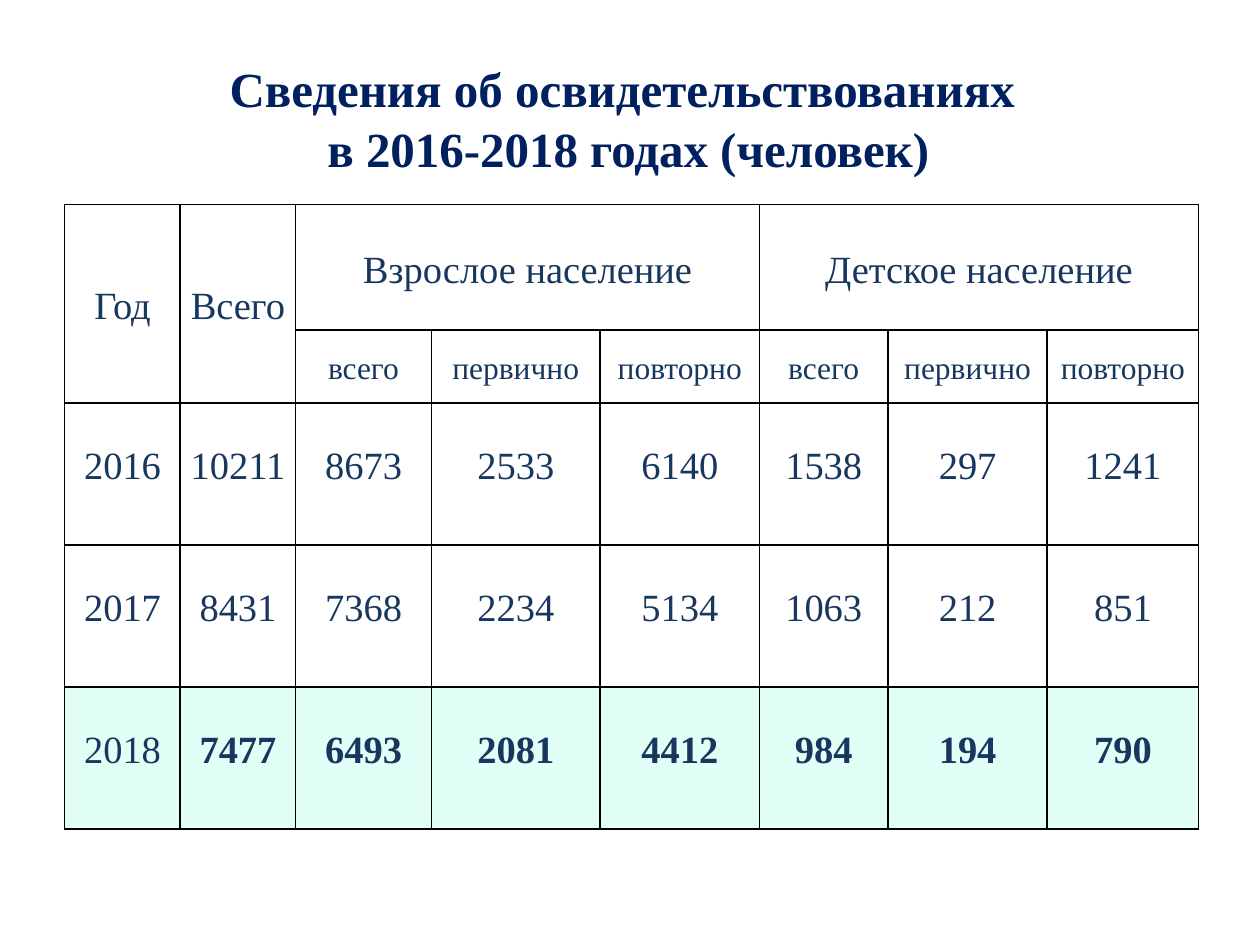
from dataclasses import dataclass

from lxml import etree
from pptx import Presentation
from pptx.dml.color import RGBColor
from pptx.enum import text
from pptx.oxml import ns
from pptx.util import Pt


@dataclass(frozen=True)
class Theme:
    """Colours, font and type sizes of the slide."""
    font: str = "Times New Roman"
    title: str = "002060"
    body: str = "17375E"
    border: str = "000000"
    highlight: str = "E1FFF6"
    title_size: float = 28
    body_size: float = 22
    small_size: float = 18


THEME = Theme()
TITLE = "Сведения об освидетельствованиях \vв 2016-2018 годах (человек)"
GROUPS = ["Взрослое население", "Детское население"]
MEASURES = ["всего", "первично", "повторно"]
ROWS = [
    ["2016", 10211, 8673, 2533, 6140, 1538, 297, 1241],
    ["2017", 8431, 7368, 2234, 5134, 1063, 212, 851],
    ["2018", 7477, 6493, 2081, 4412, 984, 194, 790],
]
COLUMN_WIDTHS = [66, 66, 77.5, 96.5, 91, 73.5, 91, 86.5]
ROW_HEIGHTS = [72, 41.5] + [81.25] * len(ROWS)


def set_text(tf, content, size, color, spacing, bold=False):
    """Write one centred paragraph in the theme font."""
    tf.text = content
    p = tf.paragraphs[0]
    p.alignment = text.PP_ALIGN.CENTER
    p.line_spacing = spacing
    for r in p.runs:
        r.font.name = THEME.font
        r.font.size = Pt(size)
        r.font.bold = bold
        r.font.color.rgb = RGBColor.from_string(color)


def set_borders(cell):
    """Draw a one-point line on every side of a cell."""
    tc_pr = cell._tc.get_or_add_tcPr()
    for i, side in enumerate(("lnL", "lnR", "lnT", "lnB")):
        ln = etree.Element(ns.qn(f"a:{side}"), w=str(Pt(1)))
        fill = etree.SubElement(ln, ns.qn("a:solidFill"))
        etree.SubElement(fill, ns.qn("a:srgbClr"), val=THEME.border)
        tc_pr.insert(i, ln)


def fill_cell(cell, content, size=THEME.body_size, header=False, bold=False):
    """Set the text, margins and anchor of a header or value cell."""
    cell.margin_left = cell.margin_right = Pt(5)
    cell.margin_top = cell.margin_bottom = 0
    anchor = text.MSO_ANCHOR
    cell.vertical_anchor = anchor.MIDDLE if header else anchor.TOP
    set_text(cell.text_frame, str(content), size, THEME.body,
             1.15 if header else 2.0, bold)


def add_title(s, left, top, width, height):
    """Place the two-line slide title in the given box."""
    sp = s.shapes.add_textbox(Pt(left), Pt(top), Pt(width), Pt(height))
    tf = sp.text_frame
    tf.word_wrap = True
    tf.vertical_anchor = text.MSO_ANCHOR.MIDDLE
    tf.margin_bottom = Pt(12)
    set_text(tf, TITLE, THEME.title_size, THEME.title, 1.03, bold=True)


def add_header(table):
    """Fill the two header rows and merge their spanning cells."""
    for col, label in enumerate(["Год", "Всего"]):
        table.cell(0, col).merge(table.cell(1, col))
        fill_cell(table.cell(0, col), label, header=True)
    span = len(MEASURES)
    for g, group in enumerate(GROUPS):
        first = 2 + g * span
        table.cell(0, first).merge(table.cell(0, first + span - 1))
        fill_cell(table.cell(0, first), group, header=True)
        for i, measure in enumerate(MEASURES):
            fill_cell(table.cell(1, first + i), measure,
                      THEME.small_size, header=True)


def add_examinations_table(s, left, top, width, height):
    """Place the table of examinations, scaled to the given box."""
    frame = s.shapes.add_table(len(ROW_HEIGHTS), len(COLUMN_WIDTHS),
                               Pt(left), Pt(top), Pt(width), Pt(height))
    table = frame.table
    table.first_row = table.horz_banding = False
    for column, w in zip(table.columns, COLUMN_WIDTHS):
        column.width = Pt(w * width / sum(COLUMN_WIDTHS))
    for row, h in zip(table.rows, ROW_HEIGHTS):
        row.height = Pt(h * height / sum(ROW_HEIGHTS))
    for cell in table.iter_cells():
        cell.fill.background()
        set_borders(cell)
    add_header(table)
    for i, values in enumerate(ROWS):
        latest = i == len(ROWS) - 1
        for col, value in enumerate(values):
            cell = table.cell(i + 2, col)
            fill_cell(cell, value, bold=latest and col > 0)
            if latest:
                cell.fill.solid()
                cell.fill.fore_color.rgb = RGBColor.from_string(THEME.highlight)


def main():
    """Build and save the slide."""
    prs = Presentation()
    prs.slide_width, prs.slide_height = Pt(720), Pt(540)
    s = prs.slides.add_slide(prs.slide_layouts[6])
    add_title(s, 37, 20, 644, 102)
    add_examinations_table(s, 37, 116.75, 648, 357)
    prs.save("out.pptx")


if __name__ == "__main__":
    main()
